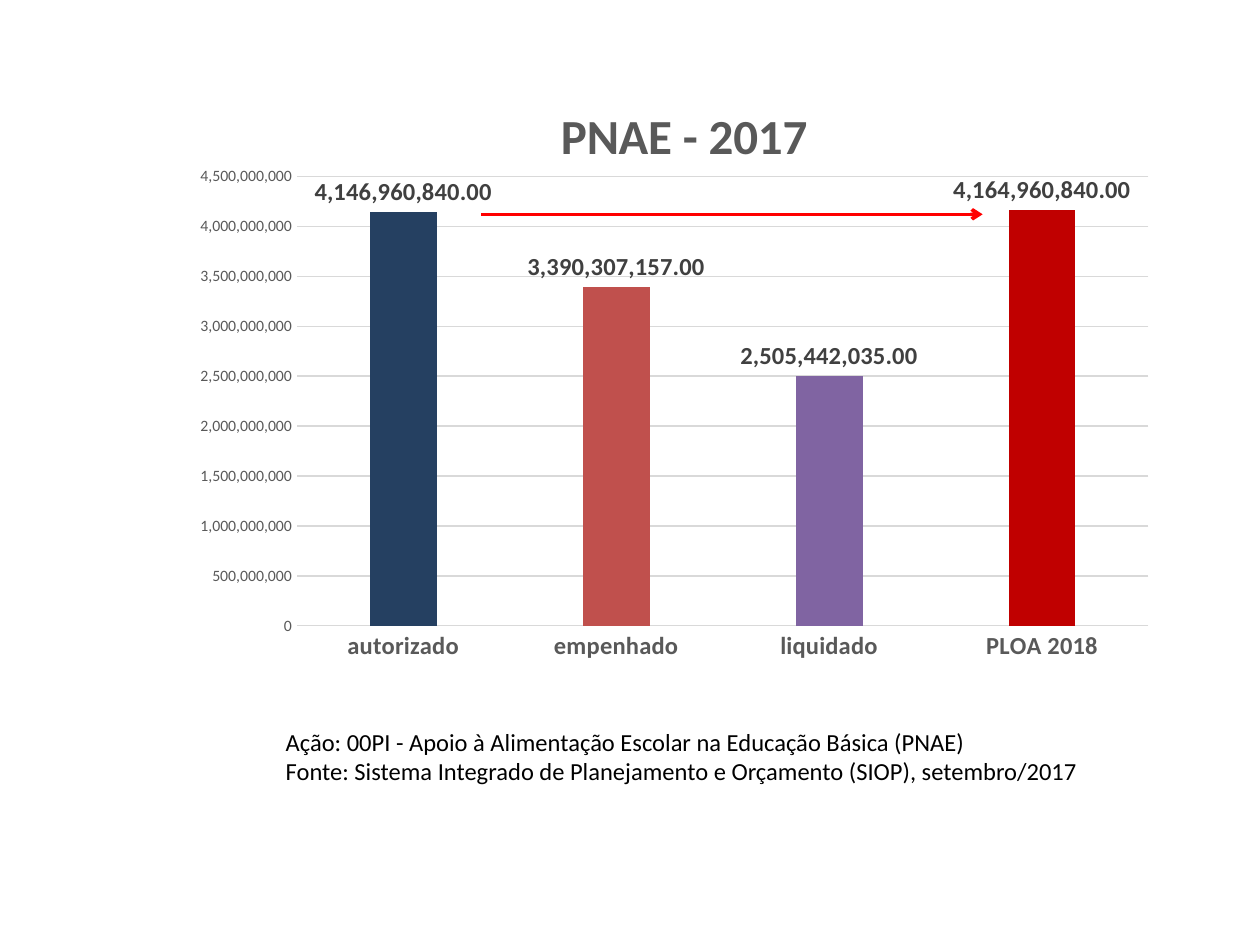
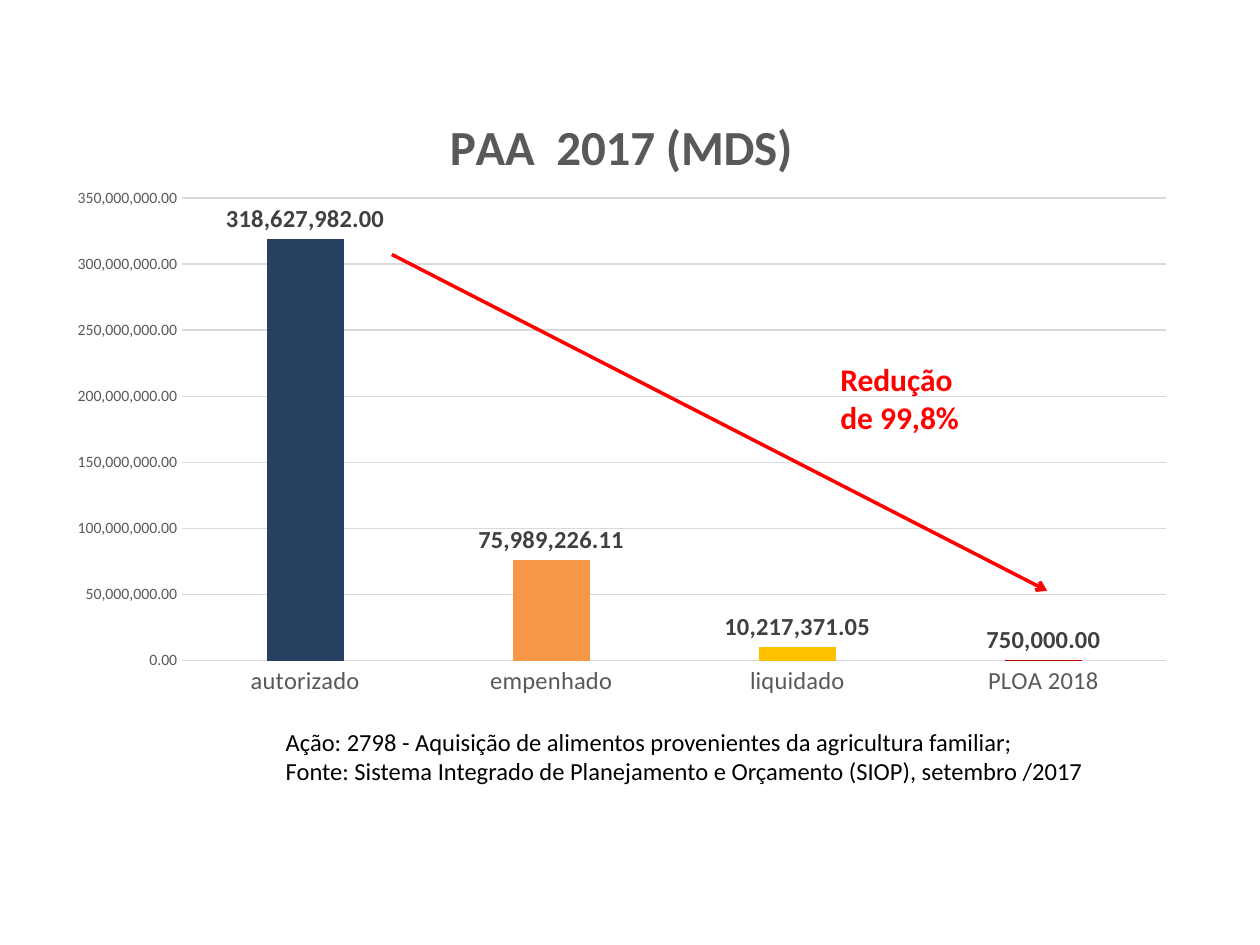
"""Build two slides comparing the 2017 budgets with the 2018 proposal."""
from lxml import etree
from pptx import Presentation
from pptx.chart.data import CategoryChartData
from pptx.dml.color import RGBColor
from pptx.enum.chart import XL_CHART_TYPE, XL_LABEL_POSITION, XL_TICK_MARK
from pptx.enum.shapes import MSO_CONNECTOR
from pptx.oxml.ns import qn
from pptx.util import Cm, Pt

COLUMNS = XL_CHART_TYPE.COLUMN_CLUSTERED
OUTSIDE = XL_LABEL_POSITION.OUTSIDE_END
NO_TICK = XL_TICK_MARK.NONE
STRAIGHT = MSO_CONNECTOR.STRAIGHT

FONT = "Calibri"
COLORS = {
    "text": "000000", "axis": "595959", "label": "404040", "grid": "D9D9D9",
    "alert": "FF0000", "navy": "254061", "brick": "C0504D", "purple": "8064A2",
    "orange": "F79646", "amber": "FFC000", "red": "C00000",
}
STAGES = ["autorizado", "empenhado", "liquidado", "PLOA 2018"]


def color(name):
    """Return the named colour."""
    return RGBColor.from_string(COLORS[name])


def style_font(font, size, tint, bold=False):
    """Apply the deck font with a size, colour and weight."""
    font.name, font.size, font.bold = FONT, Pt(size), bold
    font.color.rgb = color(tint)


def write(frame, text, size=14, tint="text", bold=False):
    """Write one paragraph per line of text into a text frame."""
    for index, line in enumerate(text.split("\n")):
        para = frame.add_paragraph() if index else frame.paragraphs[0]
        span = para.add_run()
        span.text = line
        style_font(span.font, size, tint, bold)


def place(layout, **fractions):
    """Fix a chart part at fractions of the chart area."""
    manual = etree.SubElement(layout, qn("c:manualLayout"))
    if "w" in fractions:
        etree.SubElement(manual, qn("c:layoutTarget")).set("val", "inner")
    for side in "xy":
        etree.SubElement(manual, qn(f"c:{side}Mode")).set("val", "edge")
    for key, value in fractions.items():
        etree.SubElement(manual, qn(f"c:{key}")).set("val", str(value))


class BudgetDeck:
    """Hold the deck style and the current page."""

    def __init__(self):
        """Start an empty deck."""
        self.deck = Presentation()
        self.deck.slide_width, self.deck.slide_height = Cm(25.4), Cm(19.05)
        self.page = None

    def add_page(self):
        """Start a blank page."""
        self.page = self.deck.slides.add_slide(self.deck.slide_layouts[6])

    def add_text(self, text, left, top, width, height, wrap=True, **style):
        """Add a text box."""
        box = self.page.shapes.add_textbox(Cm(left), Cm(top), Cm(width), Cm(height))
        box.text_frame.word_wrap = wrap
        write(box.text_frame, text, **style)

    def add_source(self, text):
        """Add the two-line source note below the chart."""
        self.add_text(text, 5.51, 14.53, 16.61, 2.06, wrap=False)

    def add_arrow(self, start, end):
        """Add a red arrow between two points."""
        points = [Cm(value) for value in (*start, *end)]
        arrow = self.page.shapes.add_connector(STRAIGHT, *points)
        arrow.line.color.rgb = color("alert")
        arrow.line.width = Pt(2)
        etree.SubElement(arrow.line._get_or_add_ln(), qn("a:tailEnd")).set("type", "arrow")
        etree.SubElement(arrow._element.spPr, qn("a:effectLst"))

    def add_columns(self, title, values, tints, left, top, plot, maximum, step,
                    axis_format, bold_stages=False, title_spot=None):
        """Add a column chart with one colour per budget stage."""
        data = CategoryChartData()
        data.categories = STAGES
        data.add_series("Series 1", values)
        chart = self.page.shapes.add_chart(
            COLUMNS, Cm(left), Cm(top), Cm(22.86), Cm(12.57), data).chart
        style_font(chart.font, 10, "text")
        chart.has_legend = False
        write(chart.chart_title.text_frame, title, size=28, tint="axis", bold=True)
        if title_spot:
            place(chart.chart_title._element.find(qn("c:layout")), **title_spot)
        area = chart._chartSpace.chart.plotArea
        layout = area.find(qn("c:layout"))
        if layout is None:
            layout = etree.Element(qn("c:layout"))
            area.insert(0, layout)
        place(layout, **dict(zip("xywh", plot)))
        self.style_axes(chart, maximum, step, axis_format, bold_stages)
        self.style_bars(chart.plots[0], tints)

    def style_axes(self, chart, maximum, step, axis_format, bold_stages):
        """Format both axes and the gridlines."""
        stages, amounts = chart.category_axis, chart.value_axis
        for axis in (stages, amounts):
            axis.major_tick_mark = axis.minor_tick_mark = NO_TICK
        style_font(stages.tick_labels.font, 14, "axis", bold_stages)
        style_font(amounts.tick_labels.font, 9, "axis")
        amounts.minimum_scale, amounts.maximum_scale = 0, maximum
        amounts.major_unit = step
        amounts.tick_labels.number_format = axis_format
        amounts.tick_labels.number_format_is_linked = False
        amounts.format.line.fill.background()
        for line in (stages.format.line, amounts.major_gridlines.format.line):
            line.color.rgb = color("grid")
            line.width = Pt(0.75)

    def style_bars(self, plot, tints):
        """Colour the columns and label them with their values."""
        plot.gap_width, plot.overlap = 219, -27
        plot.vary_by_categories = False
        for index, tint in enumerate(tints):
            fill = plot.series[0].points[index].format.fill
            fill.solid()
            fill.fore_color.rgb = color(tint)
        plot.has_data_labels = True
        labels = plot.data_labels
        labels.show_value = True
        labels.position = OUTSIDE
        labels.number_format = "#,##0.00"
        labels.number_format_is_linked = False
        style_font(labels.font, 14, "label", bold=True)


def main():
    """Build and save the deck."""
    budget = BudgetDeck()

    budget.add_page()
    budget.add_source(
        "Ação: 00PI - Apoio à Alimentação Escolar na Educação Básica (PNAE)\n"
        "Fonte: Sistema Integrado de Planejamento e Orçamento (SIOP), setembro/2017")
    budget.add_columns(
        "PNAE - 2017", [4146960840, 3390307157, 2505442035, 4164960840],
        ["navy", "brick", "purple", "red"], left=1.3, top=1.52,
        plot=(0.205, 0.162, 0.751, 0.721), maximum=4.5e9, step=5e8,
        axis_format="#,##0", bold_stages=True, title_spot={"x": 0.43, "y": 0.03})
    budget.add_arrow((9.7, 4.32), (19.81, 4.32))

    budget.add_page()
    budget.add_source(
        "Ação: 2798 - Aquisição de alimentos provenientes da agricultura familiar;\n"
        "Fonte: Sistema Integrado de Planejamento e Orçamento (SIOP), setembro /2017")
    budget.add_columns(
        "PAA  2017 (MDS)", [318627982, 75989226.11, 10217371.05, 750000],
        ["navy", "orange", "amber", "red"], left=1.09, top=1.73,
        plot=(0.113, 0.18, 0.868, 0.742), maximum=3.5e8, step=5e7,
        axis_format="#,##0.00")
    budget.add_arrow((7.9, 5.13), (21.11, 11.91))
    budget.add_text("Redução de 99,8%", 16.69, 7.14, 3.12, 1.8,
                    size=18, tint="alert", bold=True)

    budget.deck.save("out.pptx")


if __name__ == "__main__":
    main()
